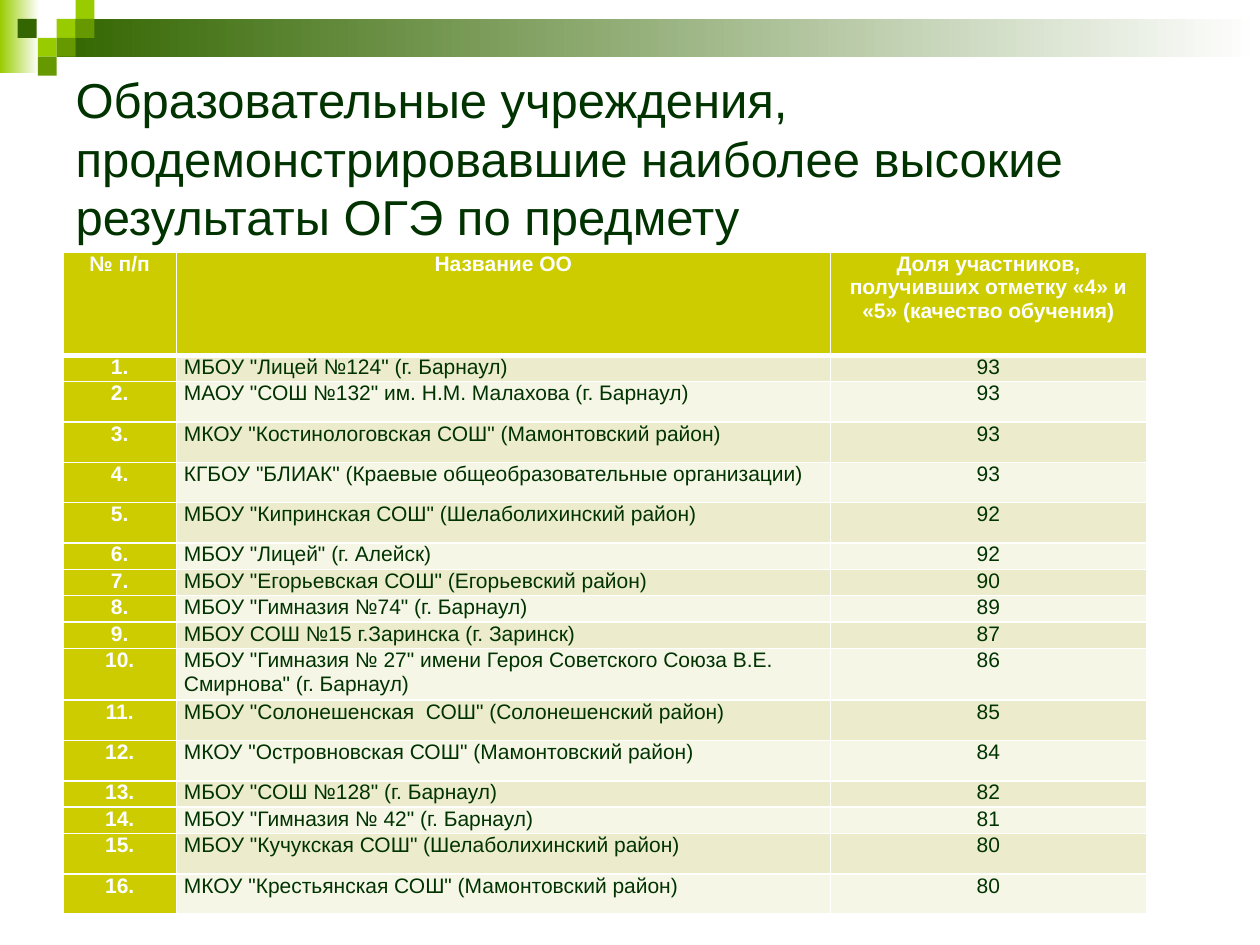
"""Builds the slide listing the schools with the highest exam results."""
from lxml import etree
from pptx import Presentation
from pptx.dml.color import RGBColor
from pptx.enum import shapes, text
from pptx.oxml import ns
from pptx.util import Inches, Pt

COLORS = {"white": "FFFFFF", "dark": "003300", "forest": "336600", "green": "669900",
          "lime": "99CC00", "olive": "CCCC00", "band": "ECECCC", "pale": "F6F6E7"}

SQUARES = [(0.45, 0.15, "lime"), (0.6, 0, "lime"), (0.6, 0.15, "green"),
           (0.3, 0.3, "lime"), (0.14, 0.15, "forest"), (0.45, 0.3, "green"),
           (0.3, 0.45, "green")]

HEADERS = ["№ п/п", "Название ОО",
           "Доля участников, получивших отметку «4» и «5» (качество обучения)"]
LOW, MID, TALL = 0.21, 0.32, 0.41
SCHOOLS = [
    ('МБОУ "Лицей №124" (г. Барнаул)', 93, LOW),
    ('МАОУ "СОШ №132" им. Н.М. Малахова (г. Барнаул)', 93, MID),
    ('МКОУ "Костинологовская СОШ" (Мамонтовский район)', 93, MID),
    ('КГБОУ "БЛИАК" (Краевые общеобразовательные организации)', 93, MID),
    ('МБОУ "Кипринская СОШ" (Шелаболихинский район)', 92, MID),
    ('МБОУ "Лицей" (г. Алейск)', 92, LOW),
    ('МБОУ "Егорьевская СОШ" (Егорьевский район)', 90, LOW),
    ('МБОУ "Гимназия №74" (г. Барнаул)', 89, LOW),
    ('МБОУ СОШ №15 г.Заринска (г. Заринск)', 87, LOW),
    ('МБОУ "Гимназия № 27" имени Героя Советского Союза В.Е. Смирнова" (г. Барнаул)',
     86, TALL),
    ('МБОУ "Солонешенская  СОШ" (Солонешенский район)', 85, MID),
    ('МКОУ "Островновская СОШ" (Мамонтовский район)', 84, MID),
    ('МБОУ "СОШ №128" (г. Барнаул)', 82, LOW),
    ('МБОУ "Гимназия № 42" (г. Барнаул)', 81, LOW),
    ('МБОУ "Кучукская СОШ" (Шелаболихинский район)', 80, MID),
    ('МКОУ "Крестьянская СОШ" (Мамонтовский район)', 80, MID),
]


def rgb(name):
    """Return the named palette colour."""
    return RGBColor.from_string(COLORS[name])


class Deck:
    """Holds the style and the current slide."""

    font = "Arial"

    def __init__(self, prs):
        """Add a title-only slide."""
        self.s = prs.slides.add_slide(prs.slide_layouts[5])

    def run(self, tf, words, size, color, bold=False, align=text.PP_ALIGN.LEFT):
        """Add one formatted run to the first paragraph."""
        p = tf.paragraphs[0]
        p.alignment = align
        r = p.add_run()
        r.text = words
        r.font.name, r.font.size, r.font.bold = self.font, Pt(size), bold
        r.font.color.rgb = rgb(color)

    def rect(self, x, y, w, h, color, fade=False):
        """Add a plain rectangle, optionally fading to white."""
        sp = self.s.shapes.add_shape(shapes.MSO_SHAPE.RECTANGLE,
                                     Inches(x), Inches(y), Inches(w), Inches(h))
        sp.shadow.inherit = False
        sp.line.fill.background()
        if fade:
            sp.fill.gradient()
            sp.fill.gradient_angle = 0
            for stop, position, name in zip(sp.fill.gradient_stops, (0, 1), (color, "white")):
                stop.position = position
                stop.color.rgb = rgb(name)
        else:
            sp.fill.solid()
            sp.fill.fore_color.rgb = rgb(color)

    def title(self, words, x, y, w, h):
        """Fill the title placeholder and bring it above the decoration."""
        sp = self.s.shapes.title
        sp.left, sp.top, sp.width, sp.height = map(Inches, (x, y, w, h))
        self.s.shapes.element.append(sp.element)
        tf = sp.text_frame
        tf.word_wrap = True
        tf.auto_size = text.MSO_AUTO_SIZE.NONE
        tf.vertical_anchor = text.MSO_ANCHOR.MIDDLE
        self.run(tf, words, 28, "dark")

    def borders(self, cell, top, bottom):
        """Draw white borders round a cell, widths in points."""
        tc_pr = cell._tc.get_or_add_tcPr()
        for side, width in (("L", 1), ("R", 1), ("T", top), ("B", bottom)):
            ln = etree.SubElement(tc_pr, ns.qn(f"a:ln{side}"), w=str(Pt(width)))
            fill = etree.SubElement(ln, ns.qn("a:solidFill"))
            etree.SubElement(fill, ns.qn("a:srgbClr"), val=COLORS["white"])

    def table(self, x, y, widths, heights, rows):
        """Add a banded table with a highlighted header row and first column."""
        tbl = self.s.shapes.add_table(len(rows), len(widths), Inches(x), Inches(y),
                                      Inches(sum(widths)), Inches(sum(heights))).table
        for column, width in zip(tbl.columns, widths):
            column.width = Inches(width)
        for i, (height, row) in enumerate(zip(heights, rows)):
            tbl.rows[i].height = Inches(height)
            for j, words in enumerate(row):
                cell = tbl.cell(i, j)
                cell.margin_left = cell.margin_right = Inches(0.06)
                cell.margin_top = cell.margin_bottom = 0
                self.borders(cell, 3 if i == 1 else 1, 3 if i == 0 else 1)
                head = i == 0 or j == 0
                cell.fill.solid()
                cell.fill.fore_color.rgb = rgb("olive" if head else ("pale", "band")[i % 2])
                left = j == 1 and not head
                self.run(cell.text_frame, words, 12, "white" if head else "dark", head,
                         text.PP_ALIGN.LEFT if left else text.PP_ALIGN.CENTER)


def main():
    """Build and save the slide."""
    prs = Presentation()
    prs.slide_width, prs.slide_height = Inches(10), Inches(7.5)
    deck = Deck(prs)
    deck.rect(0, 0, 0.31, 0.58, "lime", fade=True)
    deck.rect(0.45, 0.15, 9.55, 0.3, "forest", fade=True)
    for x, y, color in SQUARES:
        deck.rect(x, y, 0.15, 0.15, color)
    deck.title("Образовательные учреждения, продемонстрировавшие наиболее высокие "
               "результаты ОГЭ по предмету", 0.5, 0.5, 9, 1.5)
    rows = [HEADERS] + [(f"{n}.", name, str(share))
                        for n, (name, share, _) in enumerate(SCHOOLS, 1)]
    heights = [0.82] + [height for _, _, height in SCHOOLS]
    deck.table(0.5, 2, (0.9, 5.19, 2.51), heights, rows)
    prs.save("out.pptx")


if __name__ == "__main__":
    main()
